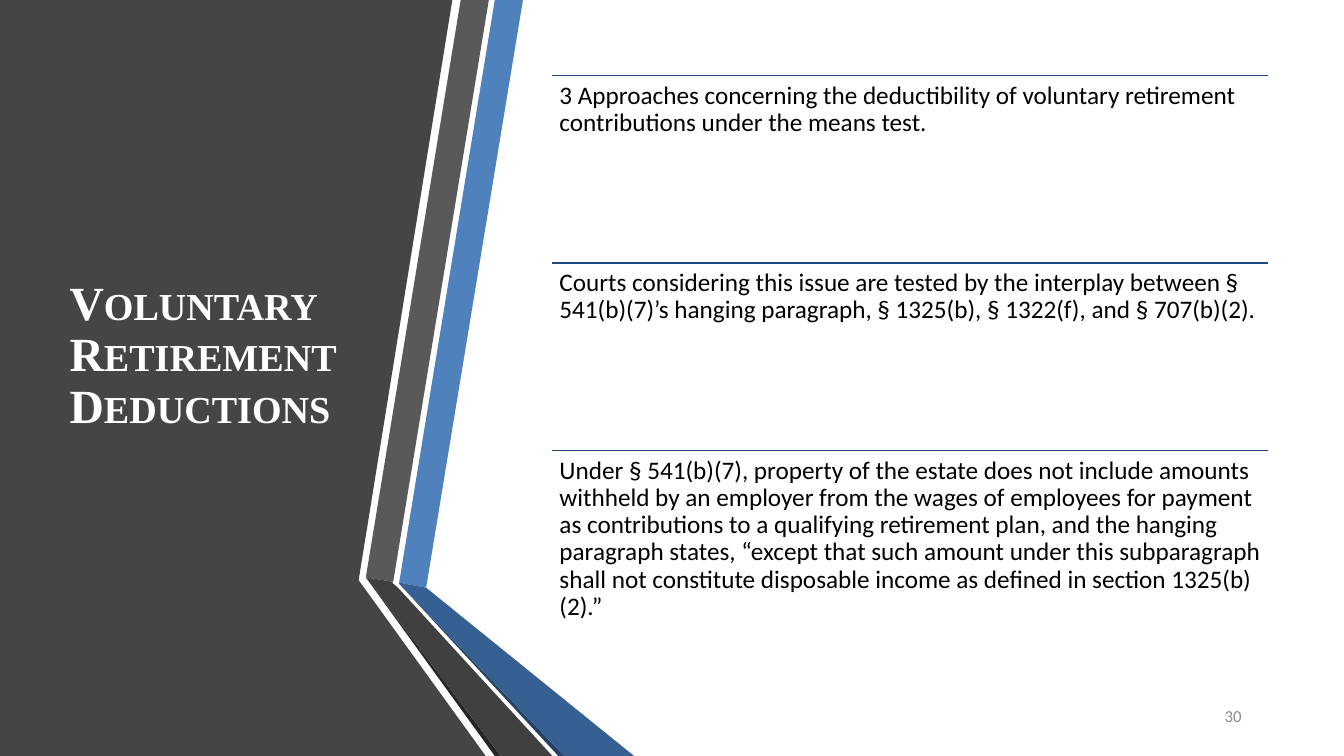
from lxml.etree import SubElement
from pptx import Presentation
from pptx.dml.color import RGBColor
from pptx.enum.shapes import MSO_CONNECTOR as Connector
from pptx.enum.text import MSO_ANCHOR as Anchor, MSO_AUTO_SIZE as AutoSize, PP_ALIGN as Align
from pptx.oxml.ns import qn
from pptx.util import Cm, Pt

WHITE = RGBColor(0xFF, 0xFF, 0xFF)
BLACK = RGBColor(0x00, 0x00, 0x00)
PANEL_GRAY = RGBColor(0x45, 0x45, 0x45)
BAND_GRAY = RGBColor(0x59, 0x59, 0x59)
FOLD_GRAY = RGBColor(0x40, 0x40, 0x40)
EDGE_GRAY = RGBColor(0x26, 0x26, 0x26)
BAND_BLUE = RGBColor(0x4F, 0x81, 0xBD)
FOLD_BLUE = RGBColor(0x37, 0x60, 0x92)
EDGE_BLUE = RGBColor(0x25, 0x40, 0x61)
RULE_BLUE = RGBColor(0x1F, 0x49, 0x7D)
NUMBER_GRAY = RGBColor(0x8C, 0x8C, 0x8C)

WIDTH, HEIGHT = 33.87, 19.05

RIBBONS = [
    (PANEL_GRAY, [(0, 0), (11.4, 0), (9.04, 14.62), (12.24, HEIGHT), (0, HEIGHT)]),
    (BAND_BLUE, [(10.06, 14.68), (10.74, 14.81), (13.18, 0), (12.47, 0)]),
    (BAND_GRAY, [(12.32, 0), (11.61, 0), (9.22, 14.55), (9.91, 14.66)]),
    (EDGE_GRAY, [(9.22, 14.55), (12.47, HEIGHT), (12.62, HEIGHT)]),
    (EDGE_BLUE, [(10.06, 14.71), (14.07, HEIGHT), (14.22, HEIGHT)]),
    (FOLD_BLUE, [(10.06, 14.71), (14.22, HEIGHT), (15.98, HEIGHT), (10.74, 14.81), (10.06, 14.68)]),
    (FOLD_GRAY, [(13.92, HEIGHT), (10.03, 14.81), (9.88, 14.68), (9.91, 14.66), (9.22, 14.55),
                 (12.62, HEIGHT)]),
]

POINTS = [
    "3 Approaches concerning the deductibility of voluntary retirement contributions under the "
    "means test.",
    "Courts considering this issue are tested by the interplay between § 541(b)(7)’s hanging "
    "paragraph, § 1325(b), § 1322(f), and § 707(b)(2).",
    "Under § 541(b)(7), property of the estate does not include amounts withheld by an employer "
    "from the wages of employees for payment as contributions to a qualifying retirement plan, "
    "and the hanging paragraph states, “except that such amount under this subparagraph shall not "
    "constitute disposable income as defined in section 1325(b)(2).”",
]


def write_text(shape, text, size, color, font="Calibri", bold=False, small_caps=False,
               align=Align.LEFT, anchor=Anchor.TOP, spacing=0.9, inset=None):
    """Fill a shape with one formatted paragraph."""
    frame = shape.text_frame
    frame.word_wrap = True
    frame.auto_size = AutoSize.NONE
    frame.vertical_anchor = anchor
    if inset is not None:
        frame.margin_left = frame.margin_right = Cm(inset)
        frame.margin_top = frame.margin_bottom = Cm(inset)
    para = frame.paragraphs[0]
    para.alignment = align
    para.line_spacing = spacing
    span = para.add_run()
    span.text = text
    span.font.name = font
    span.font.size = Pt(size)
    span.font.bold = bold
    span.font.color.rgb = color
    if small_caps:
        span.font._element.set("cap", "small")


def add_ribbons(page, left, top):
    """Draw the dark panel and its folded ribbons from the given corner."""
    for color, outline in RIBBONS:
        corners = [(Cm(left + x), Cm(top + y)) for x, y in outline]
        builder = page.shapes.build_freeform(*corners[0])
        builder.add_line_segments(corners[1:], close=True)
        ribbon = builder.convert_to_shape()
        ribbon.shadow.inherit = False
        ribbon.fill.solid()
        ribbon.fill.fore_color.rgb = color
        ribbon.line.fill.background()


def add_title(page, left, top, width, height):
    """Place the title in front of the panel."""
    title = page.shapes.title
    title.left, title.top, title.width, title.height = map(Cm, (left, top, width, height))
    title.element.getparent().append(title.element)
    write_text(title, "Voluntary Retirement Deductions", 34, WHITE, font="Times New Roman",
               bold=True, small_caps=True, anchor=Anchor.MIDDLE)


def add_points(page, left, top, width, height):
    """Stack the points in equal rows, each under a rule."""
    row_height = height / len(POINTS)
    for index, text in enumerate(POINTS):
        row_top = top + index * row_height
        rule = page.shapes.add_connector(Connector.STRAIGHT, Cm(left), Cm(row_top),
                                         Cm(left + width), Cm(row_top))
        rule.line.color.rgb = RULE_BLUE
        rule.line.width = Pt(1)
        SubElement(rule.element.spPr, qn("a:effectLst"))
        box = page.shapes.add_textbox(Cm(left), Cm(row_top), Cm(width), Cm(row_height))
        write_text(box, text, 18, BLACK, inset=0.18)


def add_page_number(page, left, top, width, height):
    """Write the page number at the right of its box."""
    box = page.shapes.add_textbox(Cm(left), Cm(top), Cm(width), Cm(height))
    write_text(box, "30", 12, NUMBER_GRAY, align=Align.RIGHT, anchor=Anchor.MIDDLE, spacing=1.0)


def main():
    """Build the slide and save it."""
    deck = Presentation()
    deck.slide_width, deck.slide_height = Cm(WIDTH), Cm(HEIGHT)
    page = deck.slides.add_slide(deck.slide_layouts[5])
    add_ribbons(page, 0, 0)
    add_title(page, 1.5, 1.9, 7.72, 14.17)
    add_page_number(page, 28.52, 17.53, 3.02, 1.02)
    add_points(page, 13.92, 1.9, 18.03, 14.17)
    deck.save("out.pptx")


if __name__ == "__main__":
    main()
